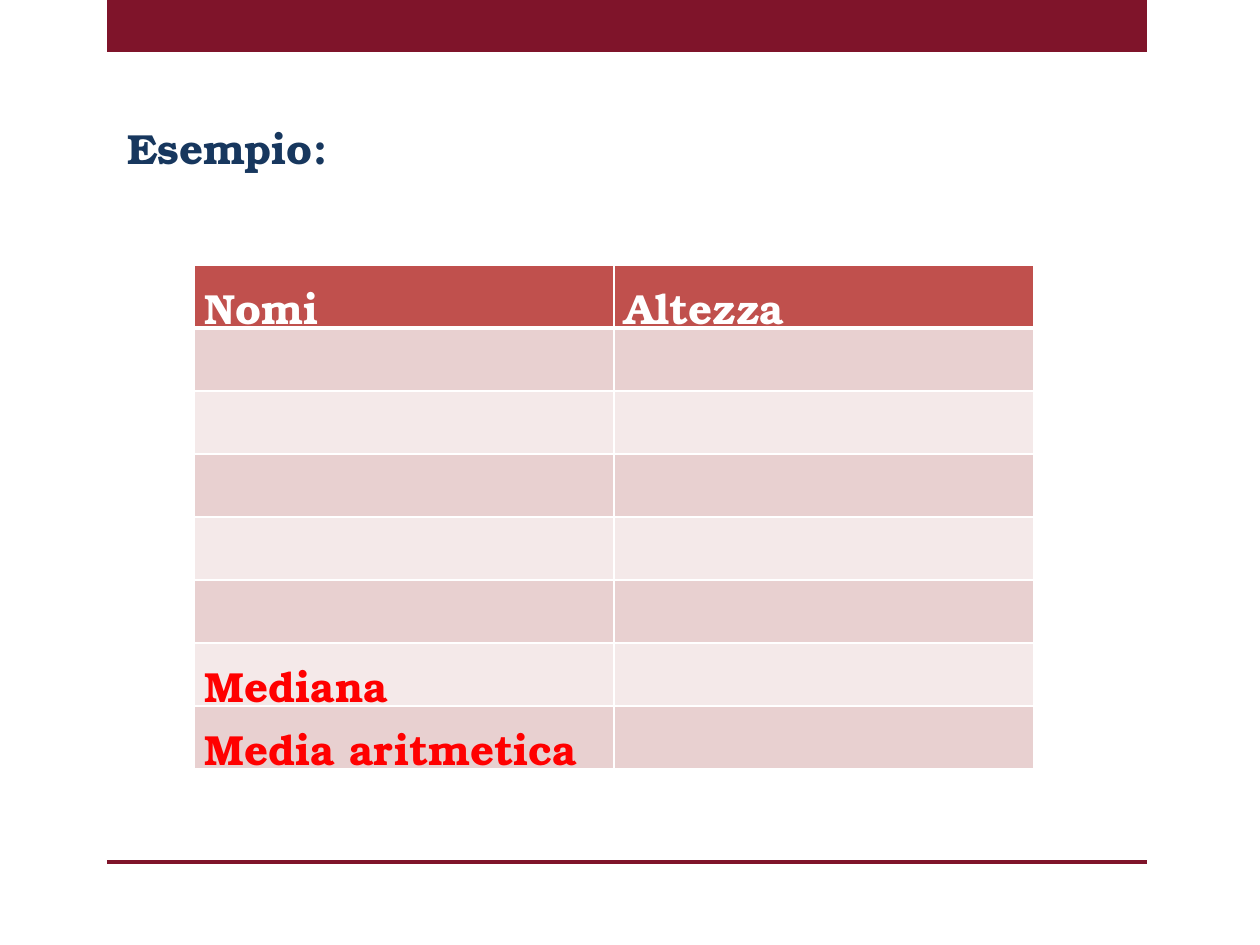
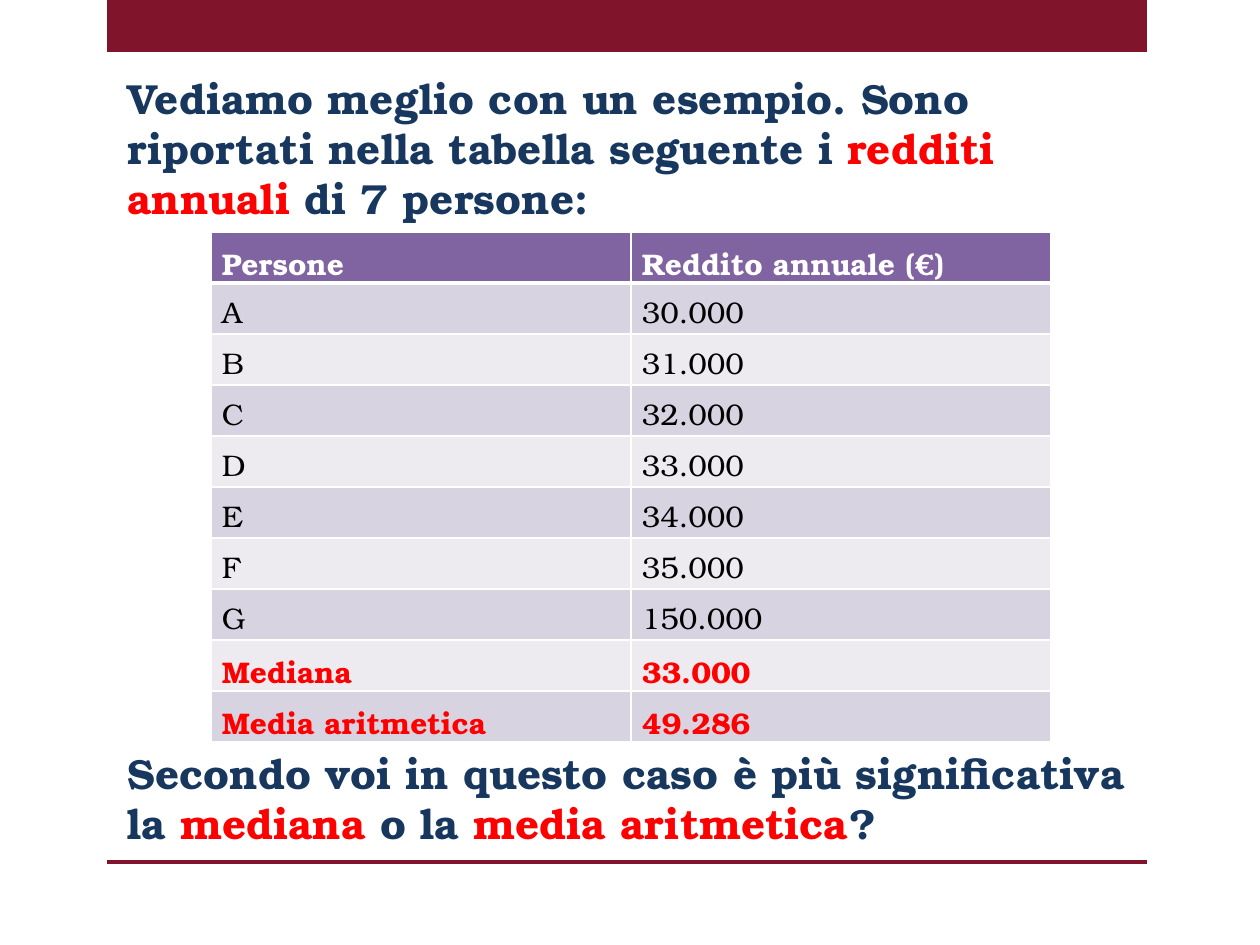
from lxml import etree
from pptx import Presentation, util as u
from pptx.dml.color import RGBColor
from pptx.enum import shapes, text
from pptx.oxml import ns

# Shared style
PX = 914400 / 126
FONT = "TeX Gyre Bonum"
WINE = RGBColor(0x7F, 0x14, 0x2A)
NAVY = RGBColor(0x17, 0x37, 0x5E)
RED = RGBColor(0xFF, 0x00, 0x00)
BLACK = RGBColor(0x00, 0x00, 0x00)
WHITE = RGBColor(0xFF, 0xFF, 0xFF)

# Table palettes: header, odd rows, even rows
BRICK = (RGBColor(0xC0, 0x50, 0x4D), RGBColor(0xE8, 0xD0, 0xD0), RGBColor(0xF4, 0xE9, 0xE9))
VIOLET = (RGBColor(0x80, 0x64, 0xA2), RGBColor(0xD8, 0xD3, 0xE0), RGBColor(0xED, 0xEA, 0xF0))

BAND_LEFT, BAND_RIGHT = 107, 1147
TEXT_LEFT, TEXT_WIDTH = 115, 1032
SUMMARY = ("Mediana", "Media aritmetica")


def px(length):
    return u.Emu(round(length * PX))


def add_span(para, words, size=24, color=NAVY, bold=True):
    span = para.add_run()
    span.text = words
    span.font.name = FONT
    span.font.size = u.Pt(size)
    span.font.bold = bold
    span.font.color.rgb = color


def add_border(cell, side, points):
    properties = cell._tc.get_or_add_tcPr()
    line = etree.SubElement(properties, ns.qn("a:ln" + side), w=str(u.Pt(points)))
    fill = etree.SubElement(line, ns.qn("a:solidFill"))
    etree.SubElement(fill, ns.qn("a:srgbClr"), val=str(WHITE))


class Deck:
    def __init__(self):
        self.file = Presentation()
        self.file.slide_width, self.file.slide_height = px(1260), px(945)
        self.page = None

    def add_page(self):
        self.page = self.file.slides.add_slide(self.file.slide_layouts[6])
        # Top band
        band = self.page.shapes.add_shape(
            shapes.MSO_SHAPE.RECTANGLE, px(BAND_LEFT), 0, px(BAND_RIGHT - BAND_LEFT), px(52))
        band.shadow.inherit = False
        band.fill.solid()
        band.fill.fore_color.rgb = WINE
        band.line.fill.background()
        # Footer rule
        rule = self.page.shapes.add_connector(
            shapes.MSO_CONNECTOR.STRAIGHT, px(BAND_LEFT), px(862), px(BAND_RIGHT), px(862))
        rule.line.color.rgb = WINE
        rule.line.width = u.Pt(2)
        etree.SubElement(rule._element.spPr, ns.qn("a:effectLst"))

    def add_text(self, top, height, *spans):
        """Spans alternate between navy and red, starting with navy."""
        box = self.page.shapes.add_textbox(px(TEXT_LEFT), px(top), px(TEXT_WIDTH), px(height))
        frame = box.text_frame
        frame.word_wrap = True
        frame.auto_size = text.MSO_AUTO_SIZE.SHAPE_TO_FIT_TEXT
        for index, words in enumerate(spans):
            add_span(frame.paragraphs[0], words, color=RED if index % 2 else NAVY)

    def add_table(self, left, top, row_height, rows, palette, size, margin_top):
        header, odd, even = palette
        table = self.page.shapes.add_table(
            len(rows), 2, px(left), px(top), px(840), px(row_height * len(rows))).table
        for r, row in enumerate(rows):
            table.rows[r].height = px(row_height)
            color = WHITE if r == 0 else RED if row[0] in SUMMARY else BLACK
            for c, words in enumerate(row):
                cell = table.cell(r, c)
                cell.margin_left = px(11)
                cell.margin_top, cell.margin_bottom = px(margin_top), 0
                for side, points in (("L", 1), ("R", 1), ("T", 3 if r == 1 else 1),
                                     ("B", 3 if r == 0 else 1)):
                    add_border(cell, side, points)
                cell.fill.solid()
                cell.fill.fore_color.rgb = header if r == 0 else odd if r % 2 else even
                if words:
                    add_span(cell.text_frame.paragraphs[0], words, size=size, color=color,
                             bold=color != BLACK)


def main():
    deck = Deck()

    # Blank exercise on heights
    deck.add_page()
    deck.add_text(116, 63, "Esempio:")
    heights = [("Nomi", "Altezza")] + [("", "")] * 5 + [(name, "") for name in SUMMARY]
    deck.add_table(194, 265, 63, heights, BRICK, size=24, margin_top=11)

    # Yearly incomes
    deck.add_page()
    deck.add_text(66, 165,
                  "Vediamo meglio con un esempio. Sono riportati nella tabella seguente i ",
                  "redditi annuali", " di 7 persone:")
    amounts = ("30.000", "31.000", "32.000", "33.000", "34.000", "35.000", "150.000")
    incomes = [("Persone", "Reddito annuale (€)"), *zip("ABCDEFG", amounts),
               *zip(SUMMARY, ("33.000", "49.286"))]
    deck.add_table(211, 232, 51, incomes, VIOLET, size=17, margin_top=9)
    deck.add_text(741, 115, "Secondo voi in questo caso è più significativa la ",
                  "mediana", " o la ", "media aritmetica", "?")

    deck.file.save("out.pptx")


if __name__ == "__main__":
    main()
